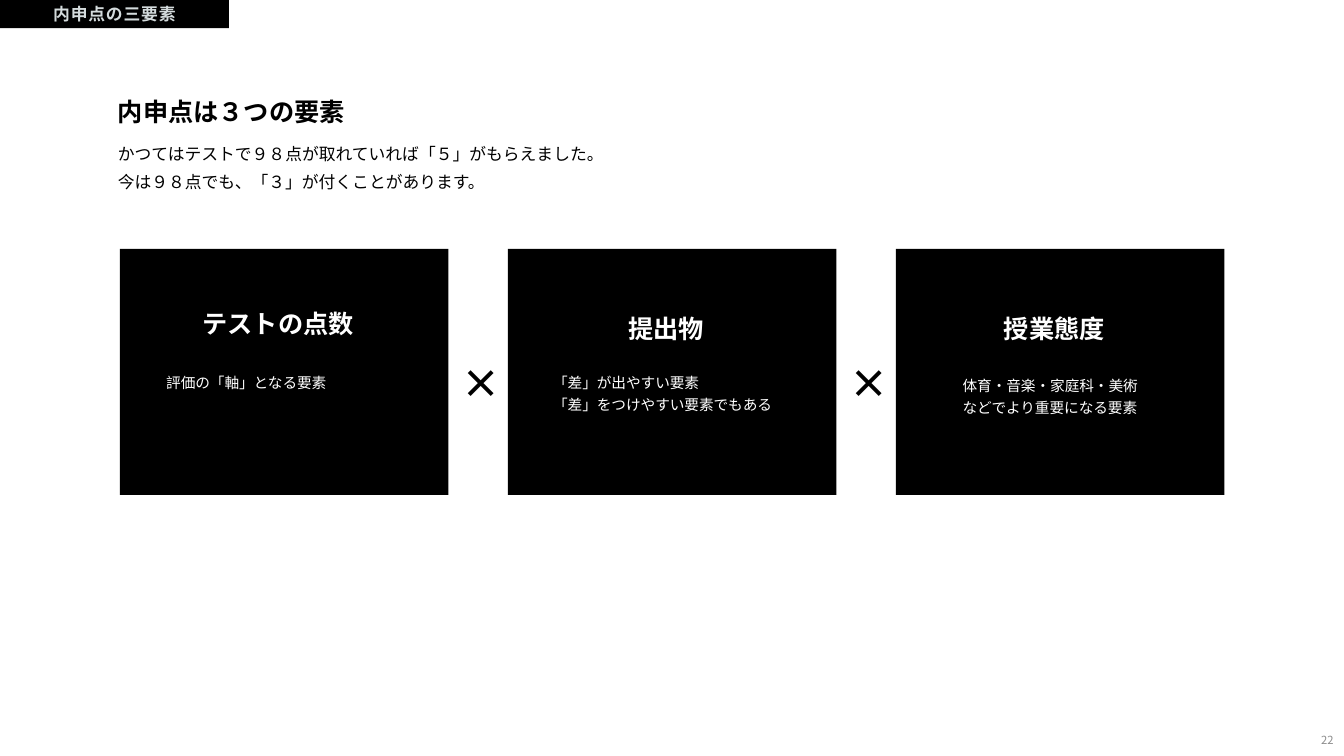
from lxml.etree import SubElement
from pptx import Presentation
from pptx.dml.color import RGBColor
from pptx.enum.shapes import MSO_SHAPE
from pptx.enum.text import MSO_ANCHOR, MSO_AUTO_SIZE, PP_ALIGN
from pptx.oxml.ns import qn
from pptx.util import Cm, Pt

FONT = "Noto Sans CJK JP"
BLACK, WHITE, GREY, PALE = "000000", "FFFFFF", "8C8C8C", "D4DBDC"
STEP = 9.78
CARDS = [
    ("テストの点数", 7.34, 4.19, 9.19, ["評価の「軸」となる要素"]),
    ("提出物", 7.47, 13.94, 9.19,
     ["「差」が出やすい要素", "「差」をつけやすい要素でもある"]),
    ("授業態度", 7.47, 24.26, 9.25,
     ["体育・音楽・家庭科・美術", "などでより重要になる要素"]),
]
FRAME = {
    "word_wrap": True,
    "auto_size": MSO_AUTO_SIZE.SHAPE_TO_FIT_TEXT,
    "vertical_anchor": MSO_ANCHOR.TOP,
    "margin_left": 0,
    "margin_right": Cm(0.25),
    "margin_top": Cm(0.13),
    "margin_bottom": Cm(0.13),
}
HEAD = {"size": Pt(18), "bold": True}


def tint(text):
    return RGBColor.from_string(text)


def apply(item, values):
    for name, value in values.items():
        setattr(item, name, value)


def place(shape, box):
    names = ("left", "top", "width", "height")
    apply(shape, dict(zip(names, map(Cm, box))))


def write(shape, lines, font, hue, para, **frame):
    body = shape.text_frame
    apply(body, FRAME | frame)
    body.text = "\n".join(lines)
    for line in body.paragraphs:
        apply(line, para)
        run = line.runs[0]
        apply(run.font, {"name": FONT} | font)
        run.font.color.rgb = tint(hue)
        SubElement(run.font._element, qn("a:ea"), typeface=FONT)


def label(slide, box, lines, font, hue, align, space=1.38, **frame):
    shape = slide.shapes.add_textbox(*map(Cm, box))
    para = {"alignment": align, "line_spacing": space}
    write(shape, lines, font, hue, para, **frame)


def panel(slide, box):
    shape = slide.shapes.add_shape(MSO_SHAPE.RECTANGLE, *map(Cm, box))
    shape.shadow.inherit = False
    shape.fill.solid()
    shape.fill.fore_color.rgb = tint(BLACK)
    shape.line.fill.background()


def title(slide):
    shape = slide.shapes.title
    place(shape, (2.97, 2.01, 24.84, 1.22))
    para = {"alignment": PP_ALIGN.JUSTIFY, "line_spacing": 1.38}
    write(shape, ["内申点は３つの要素"], HEAD, BLACK, para)


def tag(slide):
    shape = slide.placeholders[1]
    place(shape, (0, 0, 5.77, 0.71))
    shape.fill.solid()
    shape.fill.fore_color.rgb = tint(BLACK)
    para = {"alignment": PP_ALIGN.CENTER, "line_spacing": 0.9,
            "space_before": Pt(10)}
    write(shape, ["内申点の三要素"], {"size": Pt(12), "bold": True}, PALE, para,
          auto_size=MSO_AUTO_SIZE.NONE, margin_left=Cm(0.51),
          margin_right=Cm(0.51), margin_top=Cm(0.15))
    line = shape.text_frame.paragraphs[0]
    line.runs[0].font._element.set("spc", "60")
    props = line._p.get_or_add_pPr()
    props.set("marL", "0")
    props.set("indent", "0")
    SubElement(props, qn("a:buNone"))


def main():
    deck = Presentation()
    deck.slide_width, deck.slide_height = Cm(33.87), Cm(19.05)
    slide = deck.slides.add_slide(deck.slide_layouts[1])
    tag(slide)
    title(slide)
    label(slide, (2.97, 3.3, 27.69, 1.63),
          ["かつてはテストで９８点が取れていれば「５」がもらえました。",
           "今は９８点でも、「３」が付くことがあります。"],
          {"size": Pt(12)}, BLACK, PP_ALIGN.JUSTIFY)
    for i, (name, top, left, down, notes) in enumerate(CARDS):
        shift = i * STEP
        panel(slide, (3.02 + shift, 6.27, 8.28, 6.2))
        label(slide, (3.81 + shift, top, 6.65, 1.22), [name], HEAD, WHITE,
              PP_ALIGN.CENTER)
        label(slide, (left, down, 5.97, 0.23 + 0.56 * len(notes)), notes,
              {"size": Pt(10.5)}, WHITE, PP_ALIGN.JUSTIFY, 1.25)
    for i in range(len(CARDS) - 1):
        label(slide, (11.02 + i * STEP, 8.48, 2.44, 1.78), ["×"],
              {"size": Pt(28), "bold": True}, BLACK, PP_ALIGN.CENTER)
    label(slide, (26.24, 18.14, 7.62, 1.02), ["22"], {"size": Pt(8)}, GREY,
          PP_ALIGN.RIGHT, 1.0, vertical_anchor=MSO_ANCHOR.MIDDLE,
          auto_size=MSO_AUTO_SIZE.NONE)
    deck.save("out.pptx")


if __name__ == "__main__":
    main()
